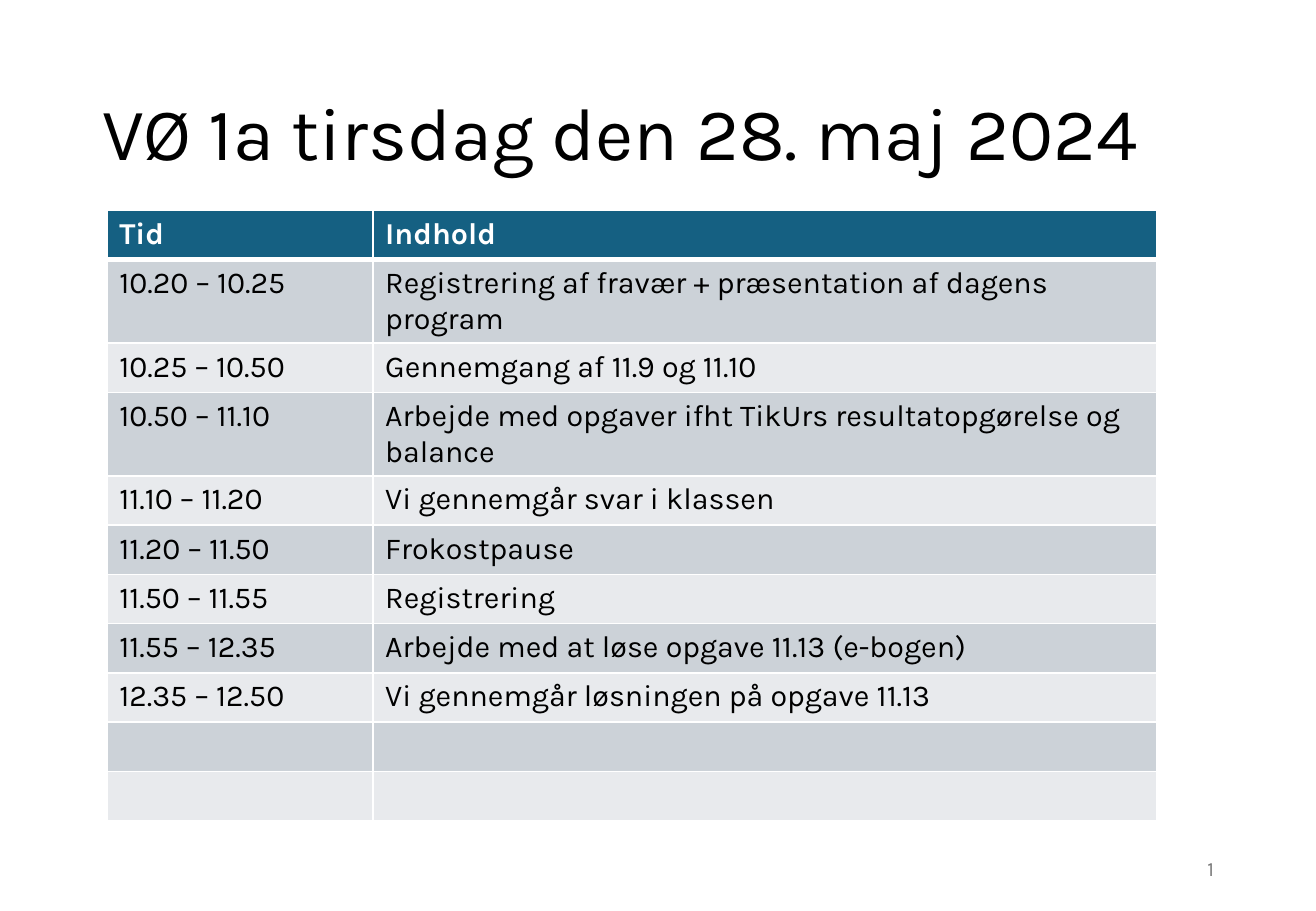
from lxml import etree
from pptx import Presentation, util as u
from pptx.dml.color import RGBColor
from pptx.enum import text
from pptx.oxml.ns import qn

FONT = "Karla"
COLOURS = {"header": "156082", "odd": "CCD2D8", "even": "E8EAED",
           "ink": "000000", "light": "FFFFFF", "number": "797979"}
ROW_HEIGHT, TALL_ROW_HEIGHT = 1.03, 1.74
PROGRAMME = [
    ("Tid", "Indhold"),
    ("10.20 – 10.25", "Registrering af fravær + præsentation af dagens program"),
    ("10.25 – 10.50", "Gennemgang af 11.9 og 11.10"),
    ("10.50 – 11.10", "Arbejde med opgaver ifht TikUrs resultatopgørelse og balance"),
    ("11.10 – 11.20", "Vi gennemgår svar i klassen"),
    ("11.20 – 11.50", "Frokostpause"),
    ("11.50 – 11.55", "Registrering"),
    ("11.55 – 12.35", "Arbejde med at løse opgave 11.13 (e-bogen)"),
    ("12.35 – 12.50", "Vi gennemgår løsningen på opgave 11.13"),
    ("", ""),
    ("", ""),
]
TALL_ROWS = {1, 3}


def colour(name):
    return RGBColor.from_string(COLOURS[name])


def style(para, size, ink, bold=False):
    para.font.name = FONT
    para.font.size = u.Pt(size)
    para.font.bold = bold
    para.font.color.rgb = colour(ink)


def place(shape, box):
    shape.left, shape.top, shape.width, shape.height = map(u.Cm, box)


def add_title(page, box):
    title = page.shapes.title
    place(title, box)
    frame = title.text_frame
    frame.text = "VØ 1a tirsdag den 28. maj 2024"
    frame.auto_size = text.MSO_AUTO_SIZE.NONE
    frame.vertical_anchor = text.MSO_ANCHOR.MIDDLE
    para = frame.paragraphs[0]
    para.alignment = text.PP_ALIGN.LEFT
    para.line_spacing = 0.9
    style(para, 44, "ink")


def add_border(cell, side, points):
    properties = cell._tc.get_or_add_tcPr()
    line = etree.SubElement(properties, qn(f"a:ln{side}"), w=str(u.Pt(points)))
    fill = etree.SubElement(line, qn("a:solidFill"))
    etree.SubElement(fill, qn("a:srgbClr"), val=COLOURS["light"])


def add_programme(page, box):
    table = page.shapes.add_table(len(PROGRAMME), 2, *map(u.Cm, box)).table
    time_width = 5.56
    table.columns[0].width = u.Cm(time_width)
    table.columns[1].width = u.Cm(box[2] - time_width)
    for index, entries in enumerate(PROGRAMME):
        height = TALL_ROW_HEIGHT if index in TALL_ROWS else ROW_HEIGHT
        table.rows[index].height = u.Cm(height)
        header = index == 0
        fill = "header" if header else ("even", "odd")[index % 2]
        for column, entry in enumerate(entries):
            cell = table.cell(index, column)
            # The rule under the header is thicker than the others
            for side in "LRTB":
                thick = (index, side) in {(0, "B"), (1, "T")}
                add_border(cell, side, 3 if thick else 1)
            cell.fill.solid()
            cell.fill.fore_color.rgb = colour(fill)
            cell.text = entry
            style(cell.text_frame.paragraphs[0], 18,
                  "light" if header else "ink", header)


def add_page_number(page, box):
    frame = page.shapes.add_textbox(*map(u.Cm, box)).text_frame
    frame.word_wrap = True
    frame.vertical_anchor = text.MSO_ANCHOR.MIDDLE
    para = frame.paragraphs[0]
    para.alignment = text.PP_ALIGN.RIGHT
    style(para, 12, "number")
    # Slide number field
    field = etree.SubElement(para._p, qn("a:fld"), type="slidenum",
                             id="{B6F15528-21DE-4FAA-801E-634DDDAF4B2B}")
    etree.SubElement(field, qn("a:rPr"), lang="da-DK")
    etree.SubElement(field, qn("a:t")).text = "1"


def main():
    deck = Presentation()
    deck.slide_width, deck.slide_height = u.Cm(27.51), u.Cm(19.05)
    page = deck.slides.add_slide(deck.slide_layouts[5])
    add_title(page, (1.88, 1.02, 23.72, 3.68))
    add_programme(page, (2.24, 4.4, 21.94, 12.75))
    add_page_number(page, (19.43, 17.65, 6.2, 1.02))
    deck.save("out.pptx")


if __name__ == "__main__":
    main()
